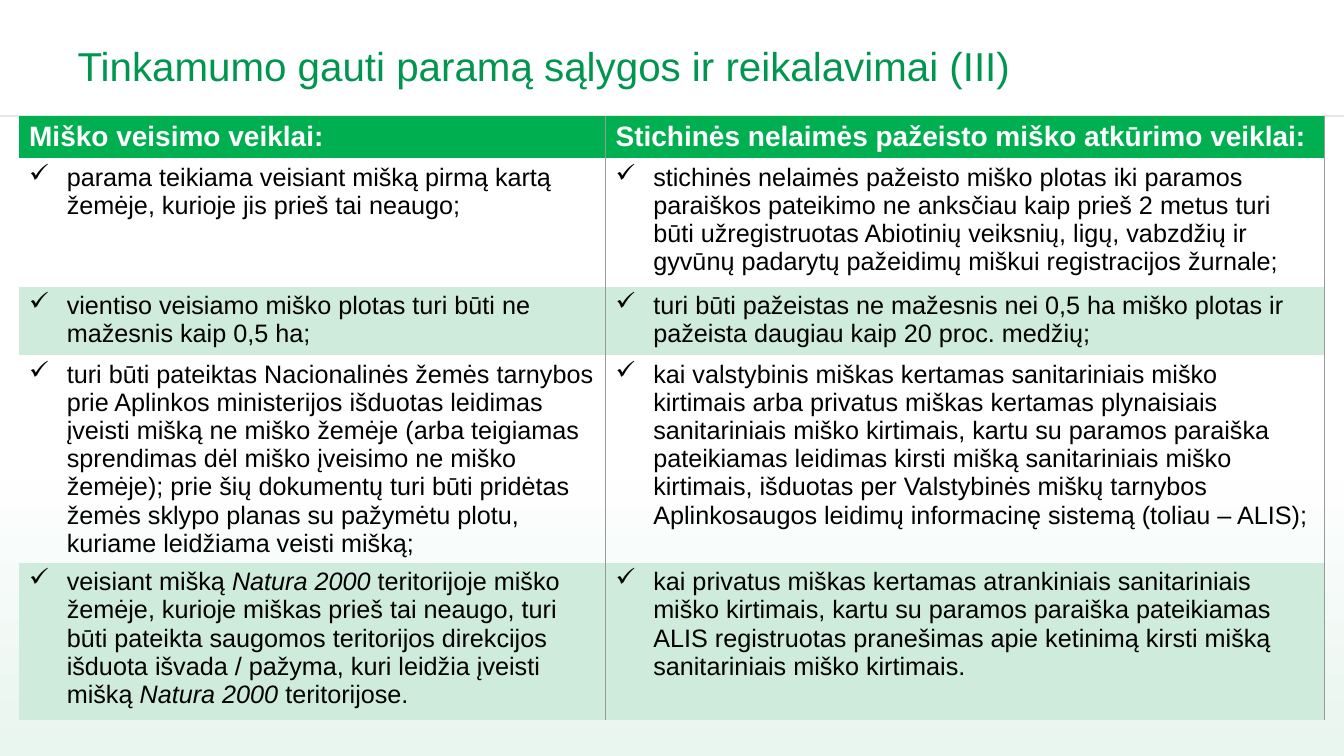
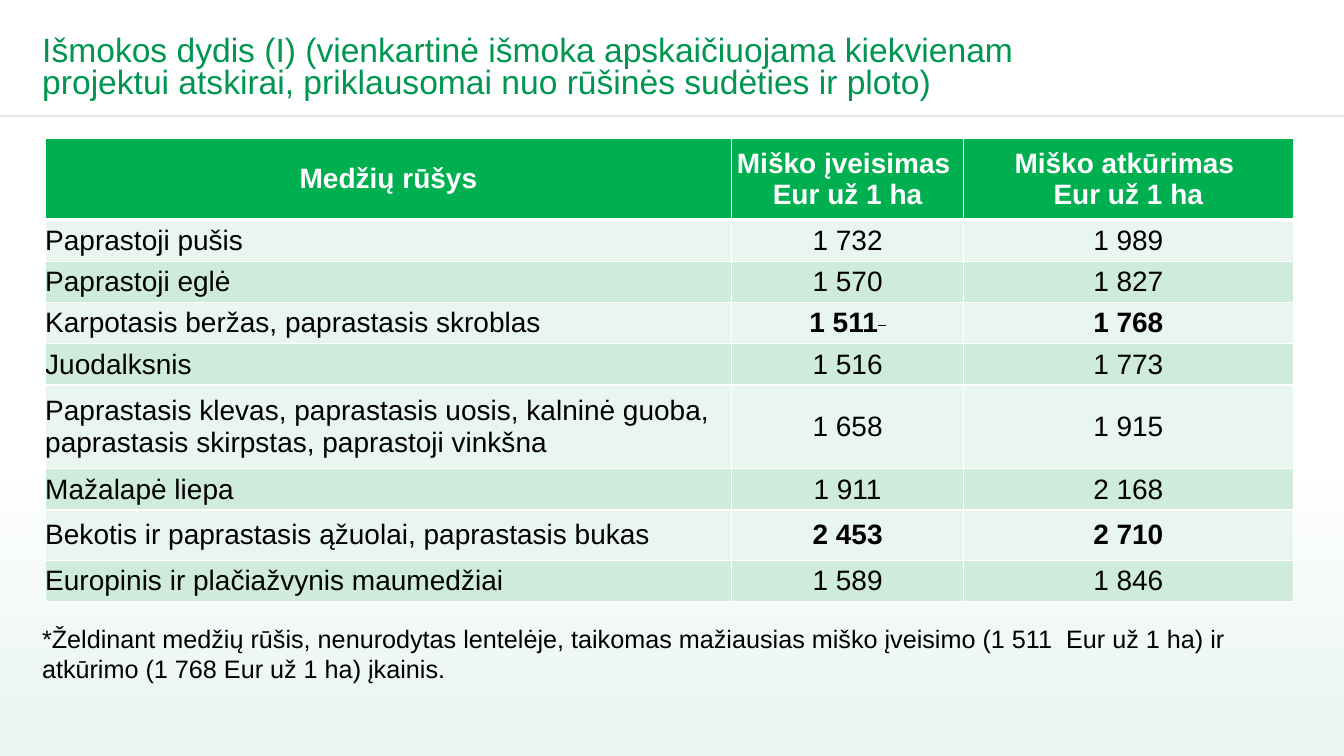
from lxml import etree
from pptx import Presentation
from pptx.dml.color import RGBColor
from pptx.enum.shapes import MSO_CONNECTOR
from pptx.enum.text import MSO_ANCHOR, PP_ALIGN
from pptx.oxml.ns import qn
from pptx.util import Cm, Pt

LEFT, CENTER = PP_ALIGN.LEFT, PP_ALIGN.CENTER
TOP, MIDDLE = MSO_ANCHOR.TOP, MSO_ANCHOR.MIDDLE
STRAIGHT = MSO_CONNECTOR.STRAIGHT

FONT = "Arial"
COLORS = {
    "title": "009650", "head": "00B050", "band": "CEEBDB", "pale": "E9F5EF",
    "rule": "E6E6E6", "edge": "999999", "white": "FFFFFF", "text": "000000",
}
WIDTH, HEIGHT, RULE_Y = 33.87, 19.05, 2.92
PLAIN_STYLE = "{2D5ABB26-0587-4C30-8999-92F81FD0307C}"

TERMS = [
    ("Miško veisimo veiklai:",
     "Stichinės nelaimės pažeisto miško atkūrimo veiklai:"),
    ("parama teikiama veisiant mišką pirmą kartą žemėje, kurioje jis prieš "
     "tai neaugo;",
     "stichinės nelaimės pažeisto miško plotas iki paramos paraiškos pateikimo "
     "ne anksčiau kaip prieš 2 metus turi būti užregistruotas Abiotinių "
     "veiksnių, ligų, vabzdžių ir gyvūnų padarytų pažeidimų miškui "
     "registracijos žurnale;"),
    ("vientiso veisiamo miško plotas turi būti ne mažesnis kaip 0,5 ha;",
     "turi būti pažeistas ne mažesnis nei 0,5 ha miško plotas ir pažeista "
     "daugiau kaip 20 proc. medžių;"),
    ("turi būti pateiktas Nacionalinės žemės tarnybos prie Aplinkos "
     "ministerijos išduotas leidimas įveisti mišką ne miško žemėje (arba "
     "teigiamas sprendimas dėl miško įveisimo ne miško žemėje); prie šių "
     "dokumentų turi būti pridėtas žemės sklypo planas su pažymėtu plotu, "
     "kuriame leidžiama veisti mišką;",
     "kai valstybinis miškas kertamas sanitariniais miško kirtimais arba "
     "privatus miškas kertamas plynaisiais sanitariniais miško kirtimais, "
     "kartu su paramos paraiška pateikiamas leidimas kirsti mišką "
     "sanitariniais miško kirtimais, išduotas per Valstybinės miškų tarnybos "
     "Aplinkosaugos leidimų informacinę sistemą (toliau – ALIS);"),
    ([("veisiant mišką ", ""), ("Natura 2000 ", "italic"),
      ("teritorijoje miško žemėje, kurioje miškas prieš tai neaugo, turi būti "
       "pateikta saugomos teritorijos direkcijos išduota išvada / pažyma, "
       "kuri leidžia įveisti mišką ", ""),
      ("Natura 2000 ", "italic"), ("teritorijose.", "")],
     "kai privatus miškas kertamas atrankiniais sanitariniais miško kirtimais, "
     "kartu su paramos paraiška pateikiamas ALIS registruotas pranešimas apie "
     "ketinimą kirsti mišką sanitariniais miško kirtimais."),
]
RATES = [
    ("Medžių rūšys", "Miško įveisimas \nEur už 1 ha",
     "Miško atkūrimas \nEur už 1 ha"),
    ("Paprastoji pušis", "1 732", "1 989"),
    ("Paprastoji eglė", "1 570", "1 827"),
    ("Karpotasis beržas, paprastasis skroblas",
     [("1 511", ""), (" ", "strike")], "1 768"),
    ("Juodalksnis", "1 516", "1 773"),
    ("Paprastasis klevas, paprastasis uosis, kalninė guoba, paprastasis "
     "skirpstas, paprastoji vinkšna", "1 658", "1 915"),
    ("Mažalapė liepa", "1 911", "2 168"),
    ("Bekotis ir paprastasis ąžuolai, paprastasis bukas", "2 453", "2 710"),
    ("Europinis ir plačiažvynis maumedžiai", "1 589", "1 846"),
]
BOLD_ROWS = (3, 7)


def rgb(name):
    return RGBColor.from_string(COLORS[name])


def write(frame, text, size=18, color="text", bold=False, align=LEFT,
          space=None, mark=None):
    """Fill a frame from a string, or from a list of (text, style) runs."""
    if isinstance(text, str):
        paras = [[(line, "")] for line in text.split("\n")]
    else:
        paras = [text]
    frame.word_wrap = True
    for i, runs in enumerate(paras):
        para = frame.add_paragraph() if i else frame.paragraphs[0]
        para.alignment = align
        if space:
            para.line_spacing = space
        if mark:
            props = para._p.get_or_add_pPr()
            props.set("marL", str(Cm(0.95)))
            props.set("indent", str(-Cm(0.95)))
            etree.SubElement(props, qn("a:buChar")).set("char", mark)
        for words, style in runs:
            run = para.add_run()
            run.text = words
            font = run.font
            font.name, font.size, font.bold = FONT, Pt(size), bold
            font.italic = style == "italic"
            font.color.rgb = rgb(color)
            if style == "strike":
                run._r.get_or_add_rPr().set("strike", "sngStrike")


def border(cell, **sides):
    """Draw cell borders; each side is a (colour, points) pair."""
    props = cell._tc.get_or_add_tcPr()
    for side in "LRTB":
        if side in sides:
            color, width = sides[side]
            line = etree.SubElement(props, qn("a:ln" + side), w=str(Pt(width)))
            fill = etree.SubElement(line, qn("a:solidFill"))
            etree.SubElement(fill, qn("a:srgbClr"), val=COLORS[color])


def paint(cell, color):
    if color:
        cell.fill.solid()
        cell.fill.fore_color.rgb = rgb(color)
    else:
        cell.fill.background()


def grid(slide, left, top, cols, rows, dress):
    """Add a plain table and let dress(cell, row, col) fill each cell."""
    frame = slide.shapes.add_table(len(rows), len(cols), Cm(left), Cm(top),
                                   Cm(sum(cols)), Cm(sum(rows)))
    table = frame.table
    table.horz_banding = False
    table._tbl.tblPr.find(qn("a:tableStyleId")).text = PLAIN_STYLE
    for col, width in zip(table.columns, cols):
        col.width = Cm(width)
    for r, height in enumerate(rows):
        table.rows[r].height = Cm(height)
        for c in range(len(cols)):
            dress(table.cell(r, c), r, c)


def dress_term(cell, r, c):
    edge = ("edge", 0.5)
    border(cell, **({"L": edge, "R": edge} if c else {"R": edge}))
    paint(cell, "head" if r == 0 else "band" if r % 2 == 0 else None)
    look = {"mark": "✓"} if r else {"size": 20, "color": "white", "bold": True}
    cell.vertical_anchor = TOP
    write(cell.text_frame, TERMS[r][c], **look)


def dress_rate(cell, r, c):
    thin, thick = ("white", 1), ("white", 3)
    border(cell, L=thin, R=thin, T=thick if r == 1 else thin,
           B=thin if r else thick)
    paint(cell, "head" if r == 0 else "pale" if r % 2 else "band")
    cell.margin_left = cell.margin_right = 0
    cell.margin_top = cell.margin_bottom = 0
    cell.vertical_anchor = MIDDLE
    write(cell.text_frame, RATES[r][c], size=20,
          color="text" if r else "white",
          bold=r == 0 or (c > 0 and r in BOLD_ROWS),
          align=CENTER if c or r == 0 else LEFT)


def backdrop(prs):
    """Shared gradient, pale at the foot and white above."""
    fill = prs.slide_master.background.fill
    fill.gradient()
    fill.gradient_angle = 90
    for stop, place, color in zip(fill.gradient_stops, (0, 0.4),
                                  ("pale", "white")):
        stop.position = place
        stop.color.rgb = rgb(color)


def page(prs, title, size, box):
    """Add a slide with the shared rule and title style."""
    slide = prs.slides.add_slide(prs.slide_layouts[5])
    rule = slide.shapes.add_connector(STRAIGHT, 0, Cm(RULE_Y),
                                      Cm(WIDTH), Cm(RULE_Y))
    rule.line.color.rgb = rgb("rule")
    rule.line.width = Pt(1)
    etree.SubElement(rule._element.spPr, qn("a:effectLst"))
    head = slide.shapes.title
    head.left, head.top, head.width, head.height = map(Cm, box)
    head.text_frame.vertical_anchor = MIDDLE
    write(head.text_frame, title, size=size, color="title", space=0.8)
    return slide


def main():
    prs = Presentation()
    prs.slide_width, prs.slide_height = Cm(WIDTH), Cm(HEIGHT)
    backdrop(prs)

    # Conditions for support
    slide = page(prs, "Tinkamumo gauti paramą sąlygos ir reikalavimai (III)",
                 28.8, (1.7, 0.58, 24.56, 2.34))
    grid(slide, 0.48, RULE_Y, (14.78, 18.11), (1.07, 3.23, 1.73, 5.21, 3.96),
         dress_term)

    # Payment rates
    slide = page(prs, "Išmokos dydis (I) (vienkartinė išmoka apskaičiuojama "
                 "kiekvienam projektui atskirai, priklausomai nuo rūšinės "
                 "sudėties ir ploto)", 24, (0.81, 0.28, 28.07, 2.9))
    low = 1.04
    grid(slide, 1.14, 3.48, (17.3, 5.84, 8.31),
         (2.06, low, low, low, low, 2.11, low, 1.27, low), dress_rate)
    note = slide.shapes.add_textbox(Cm(0.81), Cm(15.57), Cm(32.21), Cm(1.8))
    write(note.text_frame, "*Želdinant medžių rūšis, nenurodytas lentelėje, "
          "taikomas mažiausias miško įveisimo (1 511  Eur už 1 ha) ir "
          "atkūrimo (1 768 Eur už 1 ha) įkainis.")

    prs.save("out.pptx")


if __name__ == "__main__":
    main()
